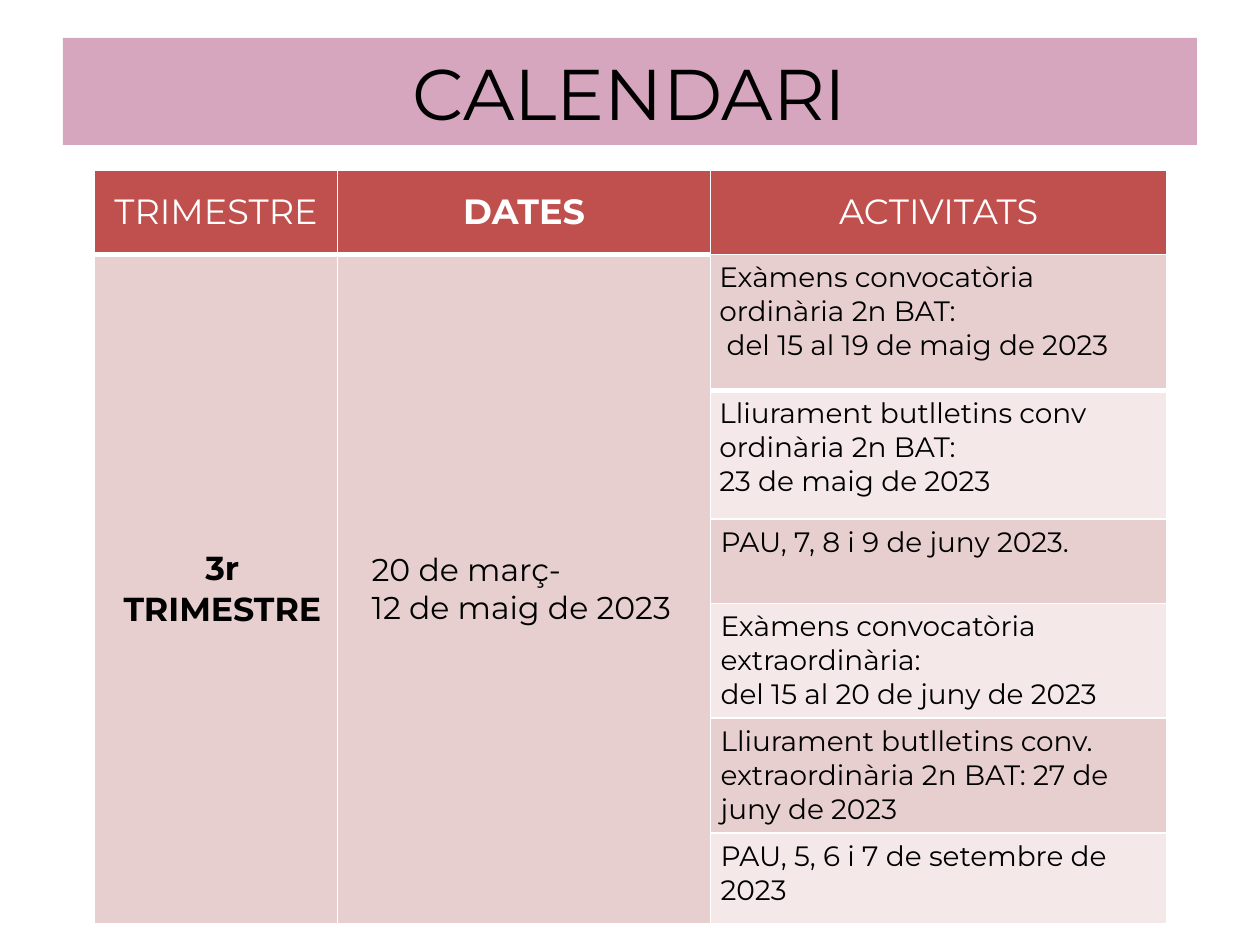
from dataclasses import dataclass

from lxml import etree
from pptx import Presentation
from pptx.dml.color import RGBColor
from pptx.enum.shapes import MSO_SHAPE
from pptx.enum.text import MSO_ANCHOR, PP_ALIGN
from pptx.oxml.ns import qn
from pptx.util import Inches, Pt

RECTANGLE = MSO_SHAPE.RECTANGLE
MIDDLE, TOP = MSO_ANCHOR.MIDDLE, MSO_ANCHOR.TOP
CENTER, LEFT = PP_ALIGN.CENTER, PP_ALIGN.LEFT


@dataclass(frozen=True)
class Theme:
    font: str = "Montserrat"
    banner: str = "D5A6BD"
    header: str = "C0504D"
    band_dark: str = "E8CFCF"
    band_light: str = "F4E8E8"
    white: str = "FFFFFF"
    black: str = "000000"
    title_size: int = 41
    header_size: int = 20
    term_size: int = 19
    dates_size: int = 18
    activity_size: int = 16
    thin: int = 1
    thick: int = 3


THEME = Theme()
COLUMN_WIDTHS = [1.93, 2.96, 3.62]
ROW_HEIGHTS = [0.67, 1.08, 1.02, 0.67, 0.9, 0.9, 0.72]
HEADERS = [("TRIMESTRE", False), ("DATES", True), ("ACTIVITATS", False)]
TERM = "3r TRIMESTRE"
DATES = "20 de març-\n12 de maig de 2023"
ACTIVITIES = [
    "Exàmens convocatòria ordinària 2n BAT:\n del 15 al 19 de maig de 2023",
    "Lliurament butlletins conv ordinària 2n BAT:\n23 de maig de 2023",
    "PAU, 7, 8 i 9 de juny 2023.",
    "Exàmens convocatòria extraordinària:\ndel 15 al 20 de juny de 2023",
    "Lliurament butlletins conv. extraordinària 2n BAT: 27 de juny de 2023",
    "PAU, 5, 6 i 7 de setembre de 2023",
]


def write_text(frame, text, size, color, bold=False, align=LEFT, indent=0):
    frame.text = text
    for para in frame.paragraphs:
        para.alignment = align
        if indent:
            para._p.get_or_add_pPr().set("marL", str(Inches(indent)))
        for span in para.runs:
            span.font.name = THEME.font
            span.font.size = Pt(size)
            span.font.bold = bold
            span.font.color.rgb = RGBColor.from_string(color)


def set_borders(cell, top, bottom):
    properties = cell._tc.get_or_add_tcPr()
    widths = {"a:lnL": THEME.thin, "a:lnR": THEME.thin, "a:lnT": top, "a:lnB": bottom}
    for tag, width in widths.items():
        line = etree.SubElement(properties, qn(tag), w=str(Pt(width)))
        fill = etree.SubElement(line, qn("a:solidFill"))
        etree.SubElement(fill, qn("a:srgbClr"), val=THEME.white)


def style_cell(cell, fill, anchor, side_margin):
    cell.fill.solid()
    cell.fill.fore_color.rgb = RGBColor.from_string(fill)
    cell.vertical_anchor = anchor
    cell.margin_left = cell.margin_right = Inches(side_margin)
    cell.margin_top = cell.margin_bottom = Inches(0.05)


def add_banner(page, left, top, width, height):
    box = page.shapes.add_shape(
        RECTANGLE, Inches(left), Inches(top), Inches(width), Inches(height)
    )
    box.shadow.inherit = False
    box.fill.solid()
    box.fill.fore_color.rgb = RGBColor.from_string(THEME.banner)
    box.line.fill.background()
    box.text_frame.word_wrap = True
    box.text_frame.vertical_anchor = MIDDLE
    write_text(box.text_frame, "CALENDARI", THEME.title_size, THEME.black, align=CENTER)


def add_calendar(page, left, top, width, height):
    table = page.shapes.add_table(
        len(ROW_HEIGHTS), len(COLUMN_WIDTHS),
        Inches(left), Inches(top), Inches(width), Inches(height),
    ).table
    for column, share in zip(table.columns, COLUMN_WIDTHS):
        column.width = Inches(width * share / sum(COLUMN_WIDTHS))
    for row, share in zip(table.rows, ROW_HEIGHTS):
        row.height = Inches(height * share / sum(ROW_HEIGHTS))

    thick_edges = {(1, 0), (1, 1), (2, 2)}
    for row in range(len(ROW_HEIGHTS)):
        for column in range(len(COLUMN_WIDTHS)):
            upper = THEME.thick if (row, column) in thick_edges else THEME.thin
            lower = THEME.thick if (row + 1, column) in thick_edges else THEME.thin
            set_borders(table.cell(row, column), upper, lower)

    for column, (label, bold) in enumerate(HEADERS):
        cell = table.cell(0, column)
        style_cell(cell, THEME.header, MIDDLE, 0.1)
        write_text(cell.text_frame, label, THEME.header_size, THEME.white, bold, CENTER)

    last_row = len(ROW_HEIGHTS) - 1
    for column in (0, 1):
        table.cell(1, column).merge(table.cell(last_row, column))
    term, dates = table.cell(1, 0), table.cell(1, 1)
    style_cell(term, THEME.band_dark, MIDDLE, 0.1)
    write_text(term.text_frame, TERM, THEME.term_size, THEME.black, True, CENTER, 0.1)
    style_cell(dates, THEME.band_dark, MIDDLE, 0.07)
    write_text(dates.text_frame, DATES, THEME.dates_size, THEME.black, indent=0.2)

    for row, activity in enumerate(ACTIVITIES, start=1):
        cell = table.cell(row, 2)
        band = THEME.band_dark if row % 2 else THEME.band_light
        style_cell(cell, band, TOP, 0.07 if row < 3 else 0.08)
        write_text(cell.text_frame, activity, THEME.activity_size, THEME.black)


def main():
    deck = Presentation()
    deck.slide_width, deck.slide_height = Inches(10), Inches(7.5)
    page = deck.slides.add_slide(deck.slide_layouts[6])
    add_calendar(page, 0.75, 1.35, sum(COLUMN_WIDTHS), sum(ROW_HEIGHTS))
    add_banner(page, 0.5, 0.3, 9, 0.85)
    deck.save("out.pptx")


if __name__ == "__main__":
    main()
